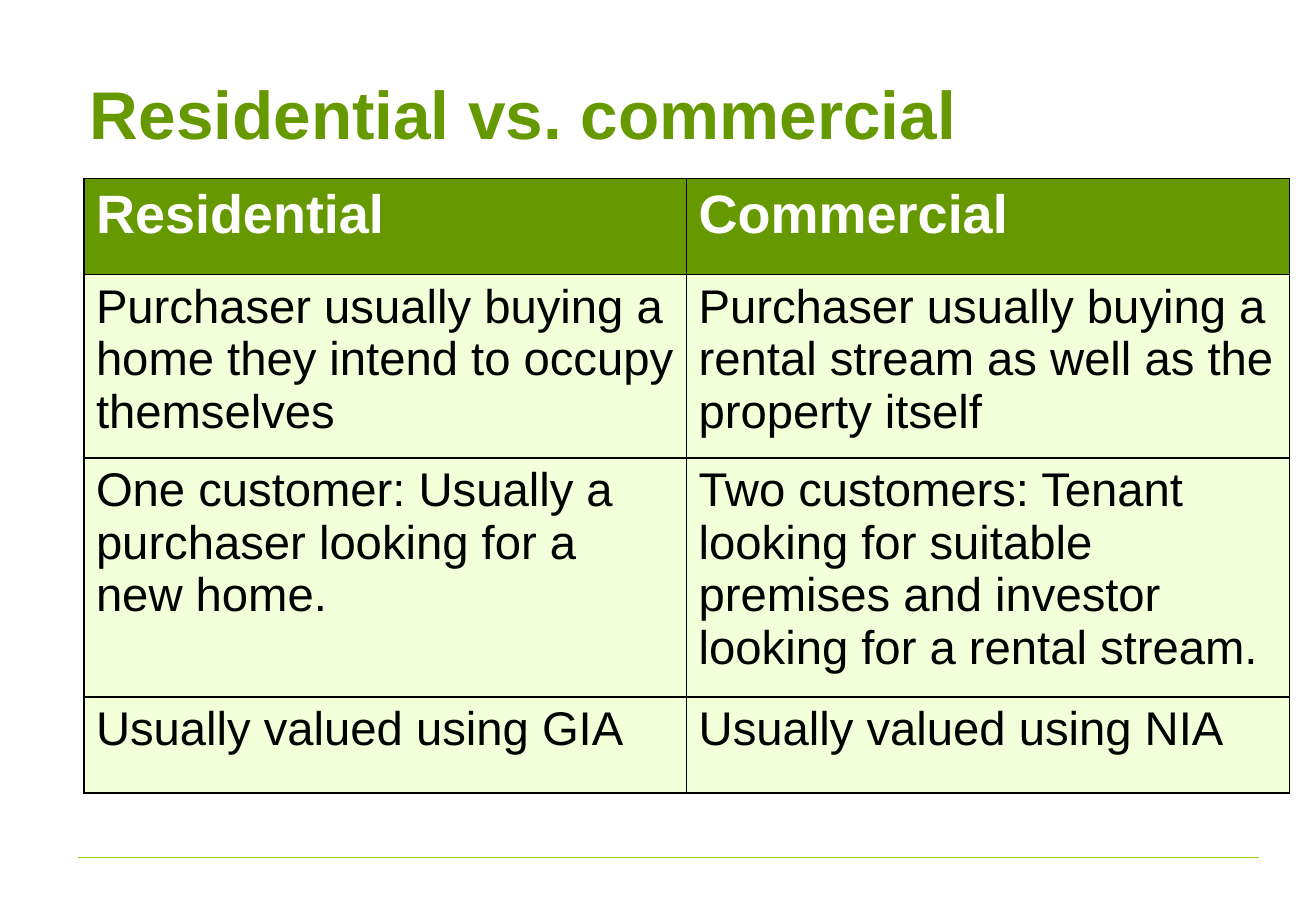
import pptx
import pptx.dml.color
import pptx.enum.shapes
import pptx.enum.text
import pptx.oxml.ns
import pptx.util
import lxml.etree

Inches = pptx.util.Inches
RGBColor = pptx.dml.color.RGBColor

GREEN = RGBColor(0x66, 0x99, 0x00)
LIME = RGBColor(0x99, 0xCC, 0x00)
PALE = RGBColor(0xF2, 0xFF, 0xD9)
WHITE = RGBColor(0xFF, 0xFF, 0xFF)
BLACK = RGBColor(0x00, 0x00, 0x00)

ROW_HEIGHTS = [0.79, 1.51, 1.97, 0.79]
COMPARISON = [
    ("Residential", "Commercial"),
    ("Purchaser usually buying a home they intend to occupy themselves",
     "Purchaser usually buying a rental stream as well as the property itself"),
    ("One customer: Usually a purchaser looking for a new home.",
     "Two customers: Tenant looking for suitable premises and investor looking for a rental stream."),
    ("Usually valued using GIA", "Usually valued using NIA"),
]


def write_text(frame, text, size, color, bold=False):
    para = frame.paragraphs[0]
    para.alignment = pptx.enum.text.PP_ALIGN.LEFT
    span = para.add_run()
    span.text = text
    span.font.name = "Arial"
    span.font.size = pptx.util.Pt(size)
    span.font.bold = bold
    span.font.color.rgb = color


def add_child(parent, tag, **attributes):
    return lxml.etree.SubElement(parent, pptx.oxml.ns.qn(tag), **attributes)


def set_borders(cell, color, width):
    properties = cell._tc.get_or_add_tcPr()
    for side in ("a:lnL", "a:lnR", "a:lnT", "a:lnB"):
        border = add_child(properties, side, w=str(pptx.util.Pt(width)))
        add_child(add_child(border, "a:solidFill"), "a:srgbClr", val=str(color))


def place_title(page, text, left, top, width, height):
    title = page.shapes.title
    title.left, title.top = Inches(left), Inches(top)
    title.width, title.height = Inches(width), Inches(height)
    frame = title.text_frame
    frame.word_wrap = True
    frame.auto_size = pptx.enum.text.MSO_AUTO_SIZE.NONE
    frame.vertical_anchor = pptx.enum.text.MSO_ANCHOR.MIDDLE
    write_text(frame, text, size=40, color=GREEN, bold=True)


def place_comparison(page, rows, left, top, width, height):
    table = page.shapes.add_table(
        len(rows), len(rows[0]),
        Inches(left), Inches(top), Inches(width), Inches(height)).table
    for column in table.columns:
        column.width = Inches(width / len(rows[0]))
    for row_index, texts in enumerate(rows):
        table.rows[row_index].height = Inches(ROW_HEIGHTS[row_index])
        header = row_index == 0
        for column_index, text in enumerate(texts):
            cell = table.cell(row_index, column_index)
            set_borders(cell, BLACK, 1)
            cell.fill.solid()
            cell.fill.fore_color.rgb = GREEN if header else PALE
            write_text(cell.text_frame, text, size=32 if header else 28,
                       color=WHITE if header else BLACK, bold=header)


def place_footer_rule(page, left, top, width):
    rule = page.shapes.add_connector(
        pptx.enum.shapes.MSO_CONNECTOR.STRAIGHT,
        Inches(left), Inches(top), Inches(left + width), Inches(top))
    rule.line.color.rgb = LIME
    rule.line.width = pptx.util.Pt(0.75)
    add_child(rule._element.spPr, "a:effectLst")


def main():
    deck = pptx.Presentation()
    deck.slide_width, deck.slide_height = Inches(10.83), Inches(7.5)
    page = deck.slides.add_slide(deck.slide_layouts[5])
    page.background.fill.solid()
    page.background.fill.fore_color.rgb = WHITE
    place_footer_rule(page, 0.64, 7.06, 9.72)
    place_title(page, "Residential vs. commercial", 0.64, 0.3, 10.19, 1.25)
    place_comparison(page, COMPARISON, 0.69, 1.47, 9.92, sum(ROW_HEIGHTS))
    deck.save("out.pptx")


if __name__ == "__main__":
    main()
